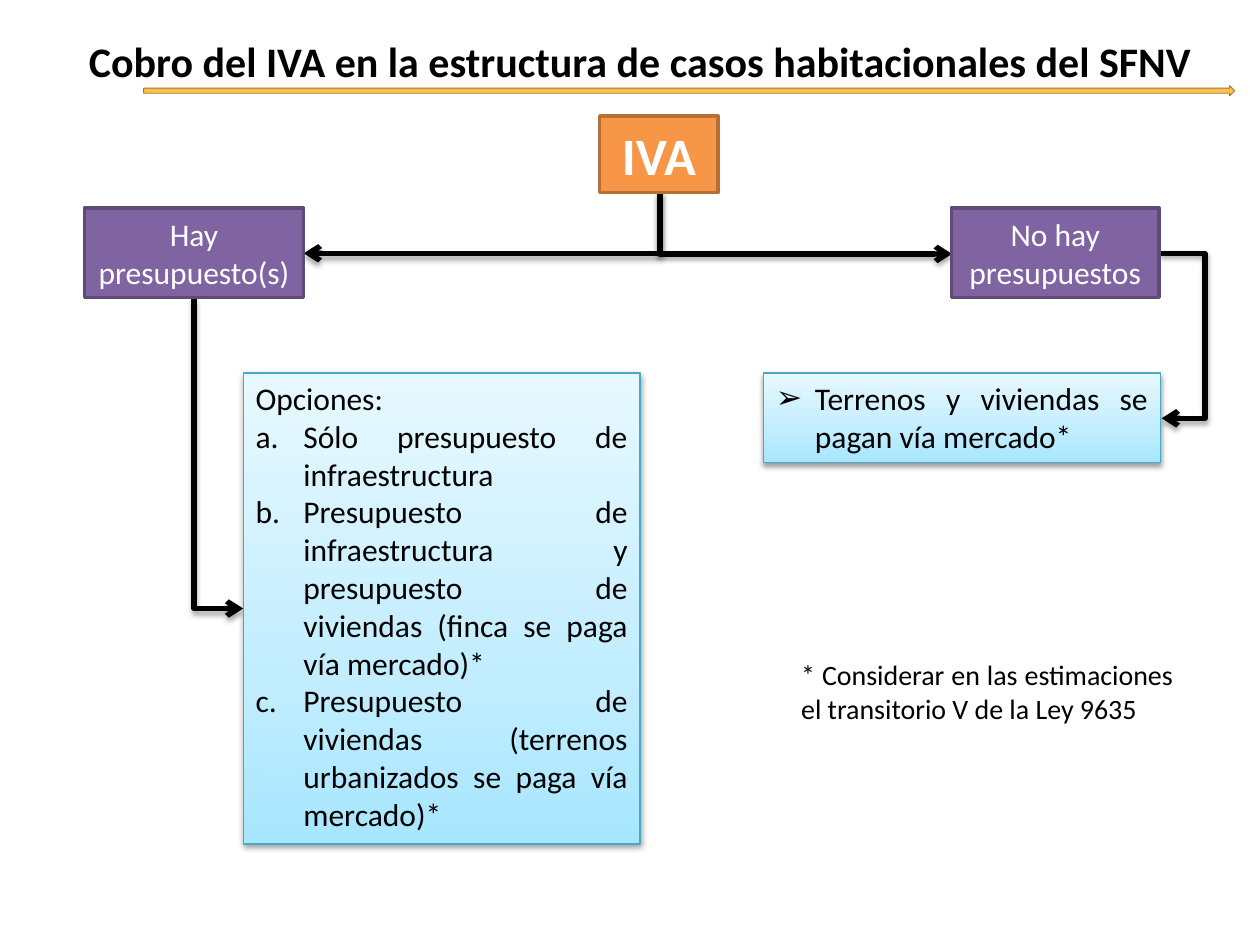
from dataclasses import dataclass

from lxml.etree import SubElement
from pptx import Presentation
from pptx.dml.color import RGBColor
from pptx.enum.shapes import MSO_CONNECTOR, MSO_SHAPE
from pptx.enum.text import MSO_ANCHOR, PP_ALIGN
from pptx.oxml import parse_xml
from pptx.oxml.ns import nsdecls, qn
from pptx.util import Inches, Pt

HUES = {
    "black": "000000", "white": "FFFFFF", "gold": "F6C448", "orange": "F79646",
    "rust": "B76F34", "purple": "8064A2", "plum": "5F4A78", "teal": "46AAC5",
    "deep": "A7E6FF", "mid": "C1EDFF", "pale": "E7F8FF",
}
FADE = ((0, "deep"), (35, "mid"), (100, "pale"))


@dataclass
class Box:
    text: str
    at: tuple[float, float, float, float]
    fill: str
    edge: str
    size: int = 18
    bold: bool = False


@dataclass
class Panel:
    lines: list[str]
    at: tuple[float, float, float, float]
    mark: str
    indent: float
    intro: int = 0


@dataclass
class Bend:
    at: tuple[float, float, float, float]
    turn: int = 0
    flip: bool = False
    adj: int | None = None


BOXES = [
    Box("IVA", (4.76, 0.92, 0.94, 0.61), "orange", "rust", 30, True),
    Box("No hay presupuestos", (7.55, 1.65, 1.65, 0.71), "purple", "plum"),
    Box("Hay presupuesto(s)", (0.67, 1.65, 1.74, 0.71), "purple", "plum"),
]
PANELS = [
    Panel([
        "Opciones:",
        "Sólo presupuesto de infraestructura",
        "Presupuesto de infraestructura y presupuesto de viviendas (finca se paga vía mercado)*",
        "Presupuesto de viviendas (terrenos urbanizados se paga vía mercado)*",
    ], (1.93, 2.96, 3.15, 3.74), "a.", 0.38, 1),
    Panel(["Terrenos y viviendas se pagan vía mercado*"],
          (6.06, 2.96, 3.15, 0.71), "➢", 0.31),
]
BENDS = [
    Bend((6.15, 0.61, 0.49, 2.32), 270, True),
    Bend((3.58, 0.35, 0.49, 2.83), 90),
    Bend((0.5, 3.4, 2.47, 0.39), 270, True),
    Bend((9.21, 2.01, 0.01, 1.31), adj=3600000),
]


def hue(name: str) -> RGBColor:
    return RGBColor.from_string(HUES[name])


def style(par, size: int, color: str, align, bold: bool = False) -> None:
    par.alignment = align
    for run in par.runs:
        font = run.font
        font.name, font.size, font.bold = "Calibri", Pt(size), bold
        font.color.rgb = hue(color)


def shade(shape, alpha: int, dist: float) -> None:
    props = shape._element.spPr
    for old in props.findall(qn("a:effectLst")):
        props.remove(old)
    props.append(parse_xml(
        f'<a:effectLst {nsdecls("a")}><a:outerShdw blurRad="{Pt(3.1)}" '
        f'dist="{Pt(dist)}" dir="5400000" rotWithShape="0">'
        f'<a:srgbClr val="{HUES["black"]}"><a:alpha val="{alpha * 1000}"/>'
        '</a:srgbClr></a:outerShdw></a:effectLst>'))


def add_rect(slide, at, fill: str, edge: str, width: float, kind=MSO_SHAPE.RECTANGLE):
    shape = slide.shapes.add_shape(kind, *map(Inches, at))
    shape.shadow.inherit = False
    shape.fill.solid()
    shape.fill.fore_color.rgb = hue(fill)
    shape.line.color.rgb = hue(edge)
    shape.line.width = Pt(width)
    return shape


def add_box(slide, box: Box) -> None:
    frame = add_rect(slide, box.at, box.fill, box.edge, 2).text_frame
    frame.word_wrap = True
    frame.text = box.text
    style(frame.paragraphs[0], box.size, "white", PP_ALIGN.CENTER, box.bold)


def add_bullet(par, mark: str, indent: float) -> None:
    props = par._p.get_or_add_pPr()
    props.set("marL", str(Inches(indent)))
    props.set("indent", str(-Inches(indent)))
    if mark == "a.":
        SubElement(props, qn("a:buFont"), typeface="+mj-lt")
        SubElement(props, qn("a:buAutoNum"), type="alphaLcPeriod")
    else:
        SubElement(props, qn("a:buFont"), typeface="Arial")
        SubElement(props, qn("a:buChar"), char=mark)


def add_panel(slide, panel: Panel) -> None:
    shape = add_rect(slide, panel.at, "pale", "teal", 0.75)
    stops = "".join(
        f'<a:gs pos="{pos * 1000}"><a:srgbClr val="{HUES[name]}"/></a:gs>'
        for pos, name in FADE)
    props = shape._element.spPr
    props.replace(props.find(qn("a:solidFill")), parse_xml(
        f'<a:gradFill {nsdecls("a")} rotWithShape="1"><a:gsLst>{stops}</a:gsLst>'
        '<a:lin ang="16200000" scaled="0"/></a:gradFill>'))
    shade(shape, 38, 1.6)
    frame = shape.text_frame
    frame.word_wrap = True
    frame.vertical_anchor = MSO_ANCHOR.TOP
    frame.text = "\n".join(panel.lines)
    for num, par in enumerate(frame.paragraphs):
        if num >= panel.intro:
            add_bullet(par, panel.mark, panel.indent)
        style(par, 18, "black", PP_ALIGN.JUSTIFY)


def add_bend(slide, bend: Bend) -> None:
    left, top, width, height = bend.at
    link = slide.shapes.add_connector(
        MSO_CONNECTOR.ELBOW, Inches(left), Inches(top),
        Inches(left + width), Inches(top + height))
    link.line.color.rgb = hue("black")
    link.line.width = Pt(3)
    SubElement(link.line._get_or_add_ln(), qn("a:tailEnd"), type="arrow")
    props = link._element.spPr
    frame = props.find(qn("a:xfrm"))
    if bend.turn:
        frame.set("rot", str(bend.turn * 60000))
    if bend.flip:
        frame.set("flipH", "1")
    geom = props.find(qn("a:prstGeom"))
    if bend.adj is None:
        geom.set("prst", "bentConnector2")
    else:
        SubElement(geom.find(qn("a:avLst")), qn("a:gd"),
                   name="adj1", fmla=f"val {bend.adj}")
    shade(link, 35, 1.8)


def main() -> None:
    deck = Presentation()
    deck.slide_width, deck.slide_height = Inches(10), Inches(7.5)
    slide = deck.slides.add_slide(deck.slide_layouts[5])

    title = slide.shapes.title
    title.left, title.top = Inches(0.59), Inches(0.23)
    title.width, title.height = Inches(8.98), Inches(0.5)
    title.text_frame.text = "Cobro del IVA en la estructura de casos habitacionales del SFNV"
    style(title.text_frame.paragraphs[0], 24, "black", PP_ALIGN.CENTER, True)

    add_rect(slide, (1.14, 0.68, 8.66, 0.08), "gold", "rust", 0.5, MSO_SHAPE.RIGHT_ARROW)
    for bend in BENDS:
        add_bend(slide, bend)
    for box in BOXES:
        add_box(slide, box)
    for panel in PANELS:
        add_panel(slide, panel)

    note = slide.shapes.add_textbox(*map(Inches, (6.26, 5.17, 3.15, 0.64))).text_frame
    note.word_wrap = True
    note.text = "* Considerar en las estimaciones el transitorio V de la Ley 9635"
    style(note.paragraphs[0], 16, "black", PP_ALIGN.JUSTIFY)
    deck.save("out.pptx")


if __name__ == "__main__":
    main()
